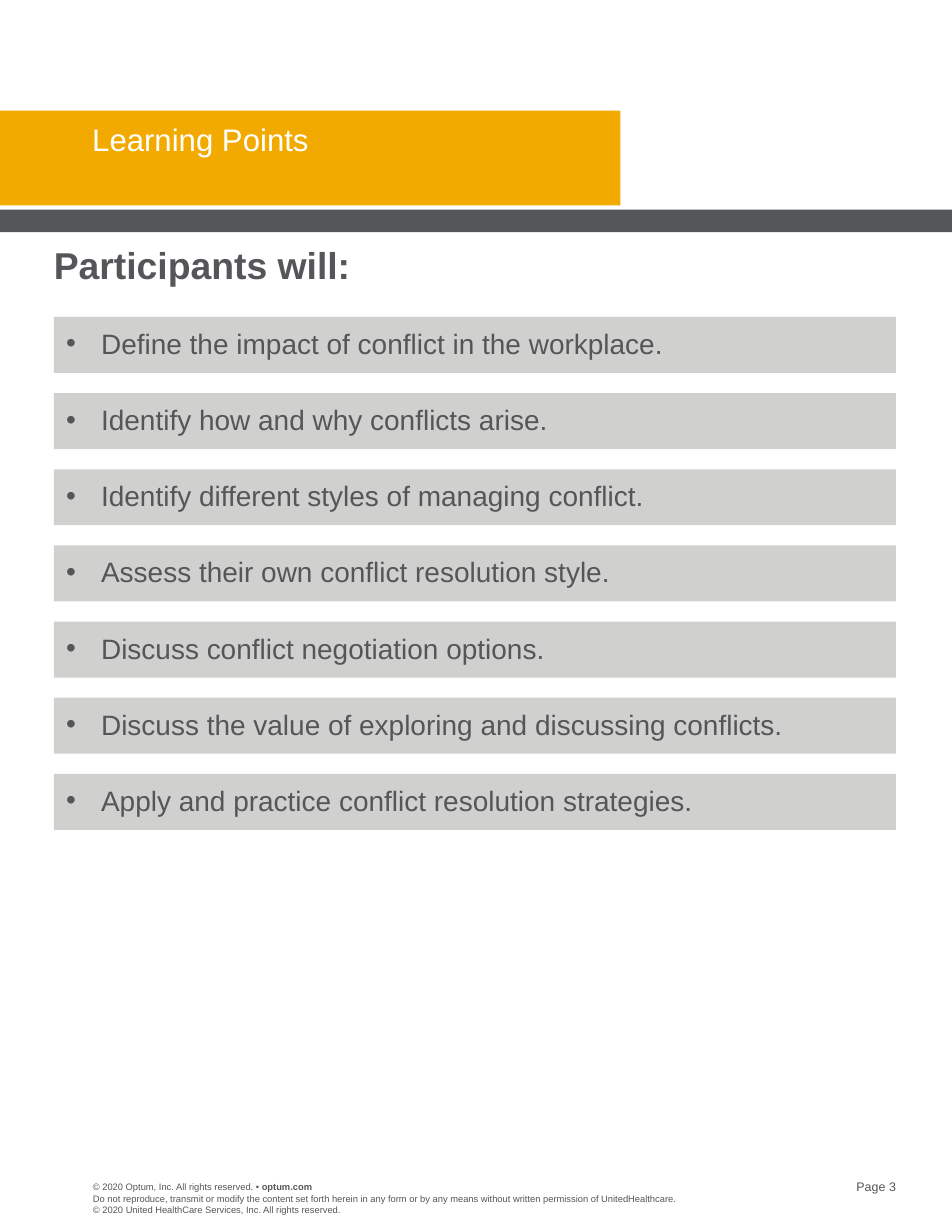
from lxml import etree
from pptx import Presentation
from pptx.dml.color import RGBColor
from pptx.enum import shapes, text
from pptx.oxml import ns
from pptx.util import Pt

GOLD = RGBColor(0xF2, 0xAA, 0x00)
DARK = RGBColor(0x55, 0x56, 0x5A)
GREY = RGBColor(0xD0, 0xD0, 0xCE)
WHITE = RGBColor(0xFF, 0xFF, 0xFF)
FONT = "Arial"

# Content
TITLE = "Learning Points"
HEADING = "Participants will:"
POINTS = [
    "Define the impact of conflict in the workplace.",
    "Identify how and why conflicts arise.",
    "Identify different styles of managing conflict.",
    "Assess their own conflict resolution style.",
    "Discuss conflict negotiation options.",
    "Discuss the value of exploring and discussing conflicts.",
    "Apply and practice conflict resolution strategies.",
]
COPYRIGHT = ["© 2020 Optum, Inc. All rights reserved. • ", "optum.com"]
NOTICE = (
    "Do not reproduce, transmit or modify the content set forth herein in any "
    "form or by any means without written permission of UnitedHealthcare. "
    "© 2020 United HealthCare Services, Inc. All rights reserved."
)
PAGE = "Page 3"

# Layout, in points
PAGE_W, PAGE_H = 612, 792
LEFT, WIDTH = 34.56, 541.44
FOOT_LEFT = 59.76
BAR_TOP, BAR_H, BAR_STEP = 203.76, 36, 48.96
BAR_INSETS = (7.92, 0, 7.92, 2.16)
INDENT = 22.5


def add_bullet(p):
    pPr = p._p.get_or_add_pPr()
    pPr.set("marL", str(Pt(INDENT)))
    pPr.set("indent", str(-Pt(INDENT)))
    clr = etree.SubElement(pPr, ns.qn("a:buClr"))
    etree.SubElement(clr, ns.qn("a:srgbClr")).set("val", str(DARK))
    etree.SubElement(pPr, ns.qn("a:buFont")).set("typeface", FONT)
    etree.SubElement(pPr, ns.qn("a:buChar")).set("char", "•")


def write(sp, *runs, size, color=DARK, bold=(), align=text.PP_ALIGN.LEFT,
          anchor=text.MSO_ANCHOR.TOP, insets=(0, 0, 0, 0), bullet=False,
          line=None):
    """Fill a shape with one paragraph; bold lists the indexes of bold runs."""
    tf = sp.text_frame
    tf.word_wrap = True
    tf.vertical_anchor = anchor
    (tf.margin_left, tf.margin_top,
     tf.margin_right, tf.margin_bottom) = map(Pt, insets)
    p = tf.paragraphs[0]
    p.alignment = align
    if line:
        p.line_spacing = line
    if bullet:
        add_bullet(p)
    for i, words in enumerate(runs):
        r = p.add_run()
        r.text = words
        r.font.name = FONT
        r.font.size = Pt(size)
        r.font.bold = i in bold
        r.font.color.rgb = color


def add_rect(s, x, y, w, h, fill):
    sp = s.shapes.add_shape(shapes.MSO_SHAPE.RECTANGLE, *map(Pt, (x, y, w, h)))
    sp.shadow.inherit = False
    sp.fill.solid()
    sp.fill.fore_color.rgb = fill
    sp.line.fill.background()
    return sp


def add_box(s, x, y, w, h):
    return s.shapes.add_textbox(*map(Pt, (x, y, w, h)))


def main():
    prs = Presentation()
    prs.slide_width, prs.slide_height = Pt(PAGE_W), Pt(PAGE_H)
    s = prs.slides.add_slide(prs.slide_layouts[6])

    # Title band
    add_rect(s, 0, 71.1, 398.8, 61, GOLD)
    add_rect(s, 0, 134.8, PAGE_W, 14.5, DARK)
    write(add_box(s, 59.3, 80, 324, 44), TITLE, size=20, color=WHITE, line=0.9)

    # Heading and bars
    write(add_box(s, LEFT, 155.5, WIDTH, 34.5), HEADING, size=24, bold=(0,))
    for i, point in enumerate(POINTS):
        bar = add_rect(s, LEFT, BAR_TOP + i * BAR_STEP, WIDTH, BAR_H, GREY)
        write(bar, point, size=18, anchor=text.MSO_ANCHOR.MIDDLE,
              insets=BAR_INSETS, bullet=True)

    # Footer
    write(add_box(s, FOOT_LEFT, 759.6, 144, 7.2), *COPYRIGHT, size=6, bold=(1,))
    write(add_box(s, FOOT_LEFT, 766.8, 378, 14.4), NOTICE, size=6)
    write(add_box(s, 517.7, 758.2, 58.3, 9.4), PAGE, size=8,
          align=text.PP_ALIGN.RIGHT)

    prs.save("out.pptx")


if __name__ == "__main__":
    main()
